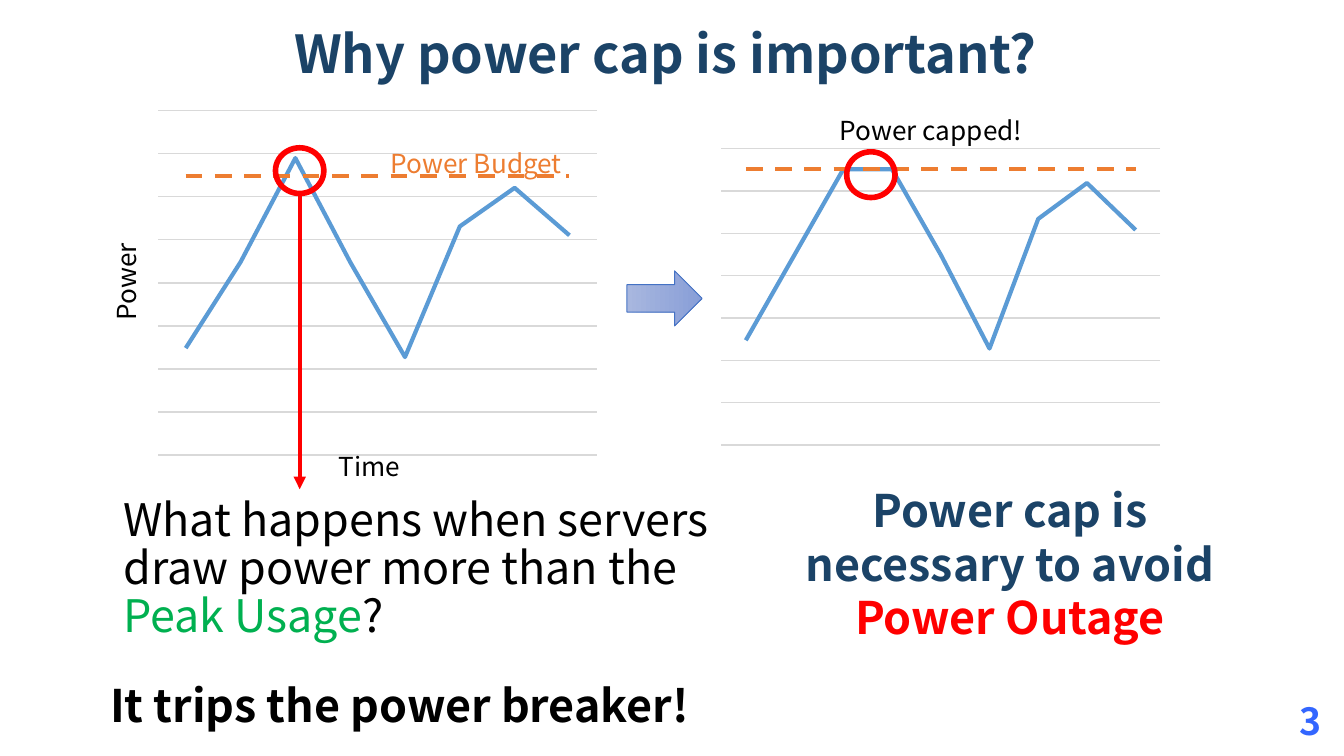
from lxml import etree
from pptx import Presentation
from pptx.chart.data import CategoryChartData
from pptx.dml.color import RGBColor
from pptx.enum import chart as ch, dml, shapes, text
from pptx.oxml import parse_xml
from pptx.oxml.ns import nsdecls, qn
from pptx.util import Inches, Pt

FONT = "Noto Sans CJK SC"
BLACK = RGBColor(0, 0, 0)
NAVY = RGBColor(0x1B, 0x43, 0x67)
GREEN = RGBColor(0x00, 0xB0, 0x50)
RED = RGBColor(0xFF, 0, 0)
ORANGE = RGBColor(0xED, 0x7D, 0x31)
BLUE = RGBColor(0x5B, 0x9B, 0xD5)
EDGE = RGBColor(0x44, 0x72, 0xC4)
PALE = RGBColor(0xA8, 0xB7, 0xDF)
DEEP = RGBColor(0x88, 0x9E, 0xD7)
GRID = RGBColor(0xD9, 0xD9, 0xD9)
PAGE = RGBColor(0x33, 0x66, 0xFF)

LEFT, MID, RIGHT = text.PP_ALIGN.LEFT, text.PP_ALIGN.CENTER, text.PP_ALIGN.RIGHT
TOP, CORE, LOW = text.MSO_ANCHOR.TOP, text.MSO_ANCHOR.MIDDLE, text.MSO_ANCHOR.BOTTOM


def place(shape, box):
    """Move a shape to a box given in inches."""
    shape.left, shape.top, shape.width, shape.height = map(Inches, box)


def write(shape, parts, size, bold=False, align=LEFT, anchor=TOP, wrap=True, tight=False):
    """Fill a shape with one paragraph of (words, colour) parts."""
    frame = shape.text_frame
    frame.word_wrap = wrap
    frame.auto_size = text.MSO_AUTO_SIZE.NONE
    frame.vertical_anchor = anchor
    if tight:
        frame.margin_left = frame.margin_right = Inches(0.07)
        frame.margin_top = frame.margin_bottom = Inches(0.04)
    para = frame.paragraphs[0]
    para.alignment = align
    for words, color in parts:
        run = para.add_run()
        run.text = words
        font = run.font
        font.name, font.size, font.bold = FONT, Pt(size), bold
        font.color.rgb = color
    return para


def label(slide, box, words, color=BLACK, turn=0):
    """Add a small one-line chart label."""
    shape = slide.shapes.add_textbox(*map(Inches, box))
    shape.rotation = turn
    write(shape, [(words, color)], 14, wrap=False)


def body(slide, box, parts, bold=False):
    """Add a statement that rests on the bottom of its box."""
    shape = slide.shapes.add_textbox(*map(Inches, box))
    para = write(shape, parts, 24, bold, anchor=LOW)
    para.line_spacing, para.space_after = 0.9, Pt(6)


def ring(slide, box):
    """Add a red circle that marks a peak."""
    shape = slide.shapes.add_shape(shapes.MSO_SHAPE.OVAL, *map(Inches, box))
    shape.shadow.inherit = False
    shape.fill.background()
    shape.line.color.rgb, shape.line.width = RED, Pt(3)


def plot(slide, box, usage, cap, unit, rows):
    """Add a line chart of power usage against a dashed budget."""
    data = CategoryChartData()
    data.categories = [str(n + 1) for n in range(len(usage))]
    data.add_series("Series 1", usage)
    data.add_series("Series 2", [cap] * len(usage))
    chart = slide.shapes.add_chart(ch.XL_CHART_TYPE.LINE, *map(Inches, box), data).chart
    chart.has_legend = chart.has_title = False
    chart.font.name, chart.font.size = FONT, Pt(10)
    chart.font.color.rgb = BLACK
    chart.category_axis.visible = False
    axis = chart.value_axis
    axis.visible = False
    axis.minimum_scale, axis.maximum_scale, axis.major_unit = 0, unit * rows, unit
    axis.has_major_gridlines = True
    line = axis.major_gridlines.format.line
    line.color.rgb, line.width = GRID, Pt(0.75)
    chart.plots[0].vary_by_categories = False
    for series, color in zip(chart.plots[0].series, (BLUE, ORANGE)):
        series.smooth = False
        series.marker.style = ch.XL_MARKER_STYLE.NONE
        line = series.format.line
        line.color.rgb, line.width = color, Pt(2.25)
    line.dash_style = dml.MSO_LINE.DASH
    area = chart._chartSpace.chart.plotArea
    for old in area.findall(qn("c:layout")):
        area.remove(old)
    area.insert(0, parse_xml(
        f'<c:layout {nsdecls("c")}><c:manualLayout><c:layoutTarget val="inner"/>'
        '<c:xMode val="edge"/><c:yMode val="edge"/><c:x val="0.02"/><c:y val="0.02"/>'
        '<c:w val="0.96"/><c:h val="0.96"/></c:manualLayout></c:layout>'))


def drop(slide, x, top, end):
    """Add a red arrow pointing straight down."""
    line = slide.shapes.add_connector(
        shapes.MSO_CONNECTOR.STRAIGHT, *map(Inches, (x, top, x, end)))
    line.line.color.rgb, line.line.width = RED, Pt(2.25)
    etree.SubElement(line.line._get_or_add_ln(), qn("a:tailEnd"), type="triangle")
    etree.SubElement(line._element.spPr, qn("a:effectLst"))


def before(slide, x, y):
    """Draw the uncapped side from the corner of its chart."""
    plot(slide, (x, y, 3.4, 2.67), [36, 65, 100, 65, 33, 77, 90, 74], 94, 14.5, 8)
    label(slide, (x - 0.56, y + 1.15, 0.78, 0.34), "Power", turn=270)
    label(slide, (x + 1.31, y + 2.53, 0.66, 0.34), "Time")
    label(slide, (x + 1.7, y + 0.28, 1.52, 0.34), "Power Budget", ORANGE)
    ring(slide, (x + 0.94, y + 0.33, 0.36, 0.34))
    drop(slide, x + 1.12, y + 0.67, y + 2.87)
    body(slide, (x - 0.29, y + 2.87, 4.57, 1.19),
         [("What happens when servers draw power more than the ", BLACK),
          ("Peak Usage", GREEN), ("?", BLACK)])
    body(slide, (x - 0.39, y + 4.18, 5.18, 0.55),
         [("It trips the power breaker!", BLACK)], bold=True)


def after(slide, x, y):
    """Draw the capped side from the corner of its chart."""
    plot(slide, (x, y, 3.4, 2.3), [38, 69, 100, 100, 69, 35, 82, 95, 78], 100, 15.36, 7)
    ring(slide, (x + 1, y + 0.07, 0.36, 0.34))
    label(slide, (x + 0.85, y - 0.26, 1.6, 0.34), "Power capped!")
    shape = slide.shapes.add_textbox(*map(Inches, (x + 0.55, y + 2.49, 3.33, 1.29)))
    write(shape, [("Power cap is necessary to avoid ", NAVY), ("Power Outage", RED)],
          24, True, MID, tight=True)


def block(slide, box):
    """Add the block arrow that leads from one chart to the other."""
    shape = slide.shapes.add_shape(shapes.MSO_SHAPE.DOWN_ARROW, *map(Inches, box))
    shape.rotation = 270
    shape.shadow.inherit = False
    shape.fill.gradient()
    shape.fill.gradient_angle = 270
    for stop, color in zip(shape.fill.gradient_stops, (PALE, DEEP)):
        stop.color.rgb = color
    shape.line.color.rgb, shape.line.width = EDGE, Pt(0.5)


def main():
    """Build the slide and save it."""
    deck = Presentation()
    deck.slide_width, deck.slide_height = Inches(10), Inches(10 * 9 / 16)
    slide = deck.slides.add_slide(deck.slide_layouts[5])
    title = slide.shapes.title
    place(title, (1.11, 0.12, 7.68, 0.55))
    write(title, [("Why power cap is important?", NAVY)], 28, True, MID, tight=True)
    before(slide, 1.11, 0.77)
    after(slide, 5.3, 1.06)
    block(slide, (4.74, 1.94, 0.41, 0.56))
    page = slide.shapes.add_textbox(*map(Inches, (7.65, 5.21, 2.25, 0.3)))
    write(page, [("3", PAGE)], 20, True, RIGHT, CORE, tight=True)
    deck.save("out.pptx")


if __name__ == "__main__":
    main()
